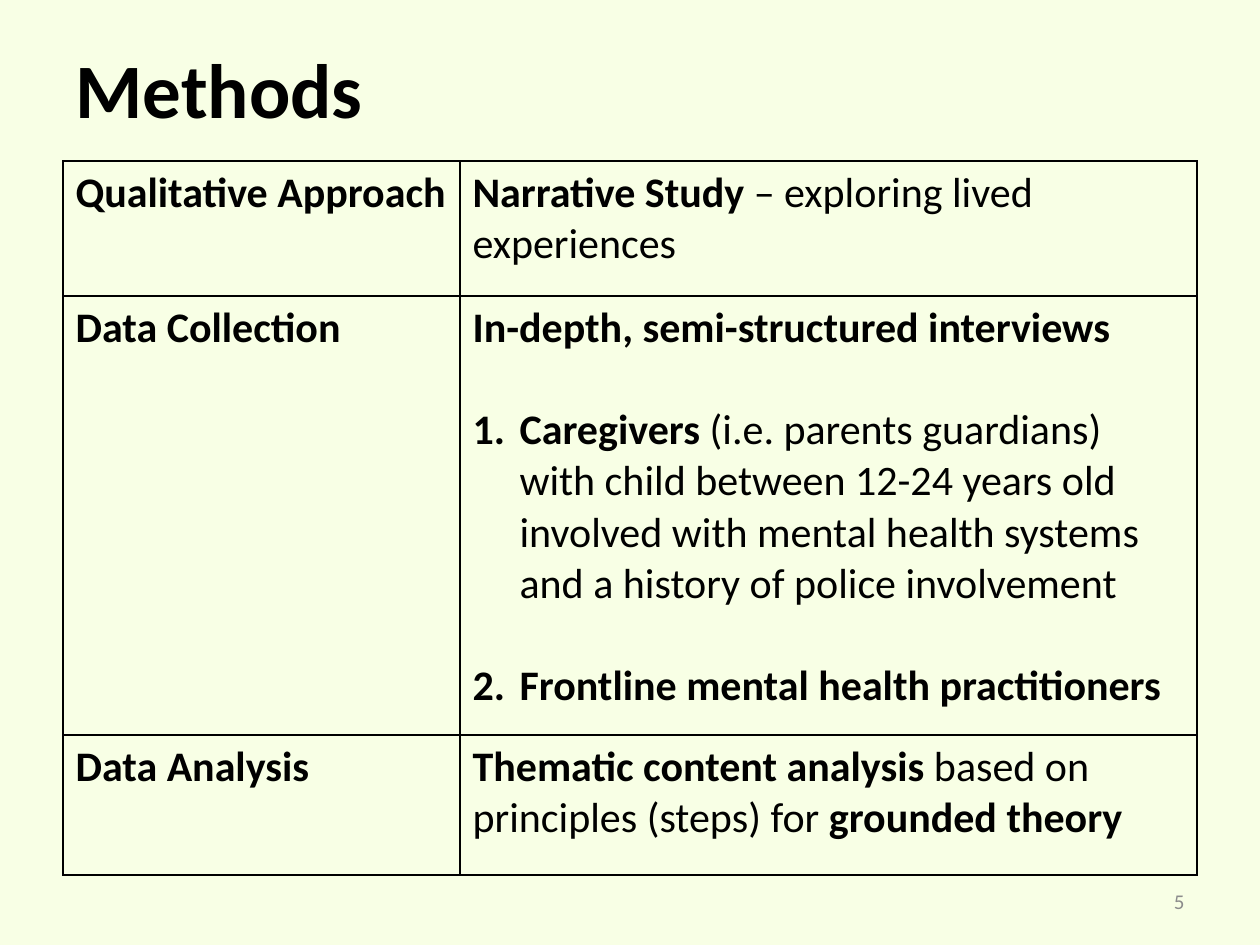
from lxml import etree
from pptx import Presentation
from pptx.dml.color import RGBColor
from pptx.enum.text import MSO_ANCHOR, PP_ALIGN
from pptx.oxml import parse_xml
from pptx.oxml.ns import qn
from pptx.util import Emu, Pt

MIDDLE = MSO_ANCHOR.MIDDLE
LEFT, RIGHT = PP_ALIGN.LEFT, PP_ALIGN.RIGHT
NS = 'xmlns:a="http://schemas.openxmlformats.org/drawingml/2006/main"'

# Content: each paragraph is (numbered, [(text, bold), ...])
TITLE = "Methods"
PAGE = "5"
ROWS = [
    ("Qualitative Approach", [
        (False, [("Narrative Study ", True), ("– exploring lived experiences", False)]),
    ]),
    ("Data Collection", [
        (False, [("In-depth, semi-structured interviews", True)]),
        (True, [("Caregivers", True),
                (" (i.e. parents guardians) with child between 12-24 years old "
                 "involved with mental health systems and a history of police "
                 "involvement", False)]),
        (True, [("Frontline mental health practitioners", True)]),
    ]),
    ("Data Analysis", [
        (False, [("Thematic content analysis ", True),
                 ("based on principles (steps) for ", False),
                 ("grounded theory", True)]),
    ]),
]

# Layout in px, 126 to the inch
TITLE_BOX = (63, 26, 1134, 123)
PAGE_BOX = (903, 876, 294, 50)
TABLE_LEFT, TABLE_TOP = 63, 161
COL_WIDTHS = (397, 737)
ROW_HEIGHTS = (135, 439, 140)
NUMBER_INDENT = 47
ITEM_GAP = Pt(29.3)  # one line of body text

BACKGROUND, INK, MUTED = "F8FFE5", "000000", "8C8C8C"
TITLE_FONT = {"name": "Calibri", "size": Pt(44), "bold": True}
BODY_FONT = {"name": "Calibri", "size": Pt(24)}
PAGE_FONT = {"name": "Calibri", "size": Pt(12)}


def px(value):
    return Emu(value * 914400 // 126)


def rgb(value):
    return RGBColor.from_string(value)


def style(font, values, color=INK):
    for key, value in values.items():
        setattr(font, key, value)
    font.color.rgb = rgb(color)


def add_run(paragraph, text, bold):
    run = paragraph.add_run()
    run.text = text
    style(run.font, {**BODY_FONT, "bold": bold})


def number(paragraph):
    paragraph.space_before = ITEM_GAP
    props = paragraph._p.get_or_add_pPr()
    props.set("marL", str(px(NUMBER_INDENT)))
    props.set("indent", str(-px(NUMBER_INDENT)))
    etree.SubElement(props, qn("a:buFont"), typeface="+mj-lt")
    etree.SubElement(props, qn("a:buAutoNum"), type="arabicPeriod")


def fill_cell(cell, paragraphs):
    frame = cell.text_frame
    for i, (numbered, runs) in enumerate(paragraphs):
        paragraph = frame.add_paragraph() if i else frame.paragraphs[0]
        if numbered:
            number(paragraph)
        for text, bold in runs:
            add_run(paragraph, text, bold)
    cell.fill.background()
    props = cell._tc.get_or_add_tcPr()
    for i, side in enumerate(("lnL", "lnR", "lnT", "lnB")):
        props.insert(i, parse_xml(
            f'<a:{side} {NS} w="{Pt(1)}"><a:solidFill><a:srgbClr val="{INK}"/>'
            f'</a:solidFill></a:{side}>'))


prs = Presentation()
prs.slide_width, prs.slide_height = px(1260), px(945)
slide = prs.slides.add_slide(prs.slide_layouts[5])
slide.background.fill.solid()
slide.background.fill.fore_color.rgb = rgb(BACKGROUND)

# Title
title = slide.shapes.title
title.left, title.top, title.width, title.height = map(px, TITLE_BOX)
title.text_frame.text = TITLE
title.text_frame.vertical_anchor = MIDDLE
heading = title.text_frame.paragraphs[0]
heading.alignment = LEFT
style(heading.runs[0].font, TITLE_FONT)

# Methods table
methods = slide.shapes.add_table(
    len(ROWS), len(COL_WIDTHS), px(TABLE_LEFT), px(TABLE_TOP),
    px(sum(COL_WIDTHS)), px(sum(ROW_HEIGHTS))).table
methods.first_row = methods.horz_banding = False
for column, width in zip(methods.columns, COL_WIDTHS):
    column.width = px(width)
for r, (label, details) in enumerate(ROWS):
    methods.rows[r].height = px(ROW_HEIGHTS[r])
    fill_cell(methods.cell(r, 0), [(False, [(label, True)])])
    fill_cell(methods.cell(r, 1), details)

# Page number
page = slide.shapes.add_textbox(*map(px, PAGE_BOX)).text_frame
page.word_wrap = True
page.vertical_anchor = MIDDLE
page.text = PAGE
page.paragraphs[0].alignment = RIGHT
style(page.paragraphs[0].runs[0].font, PAGE_FONT, MUTED)

prs.save("out.pptx")
